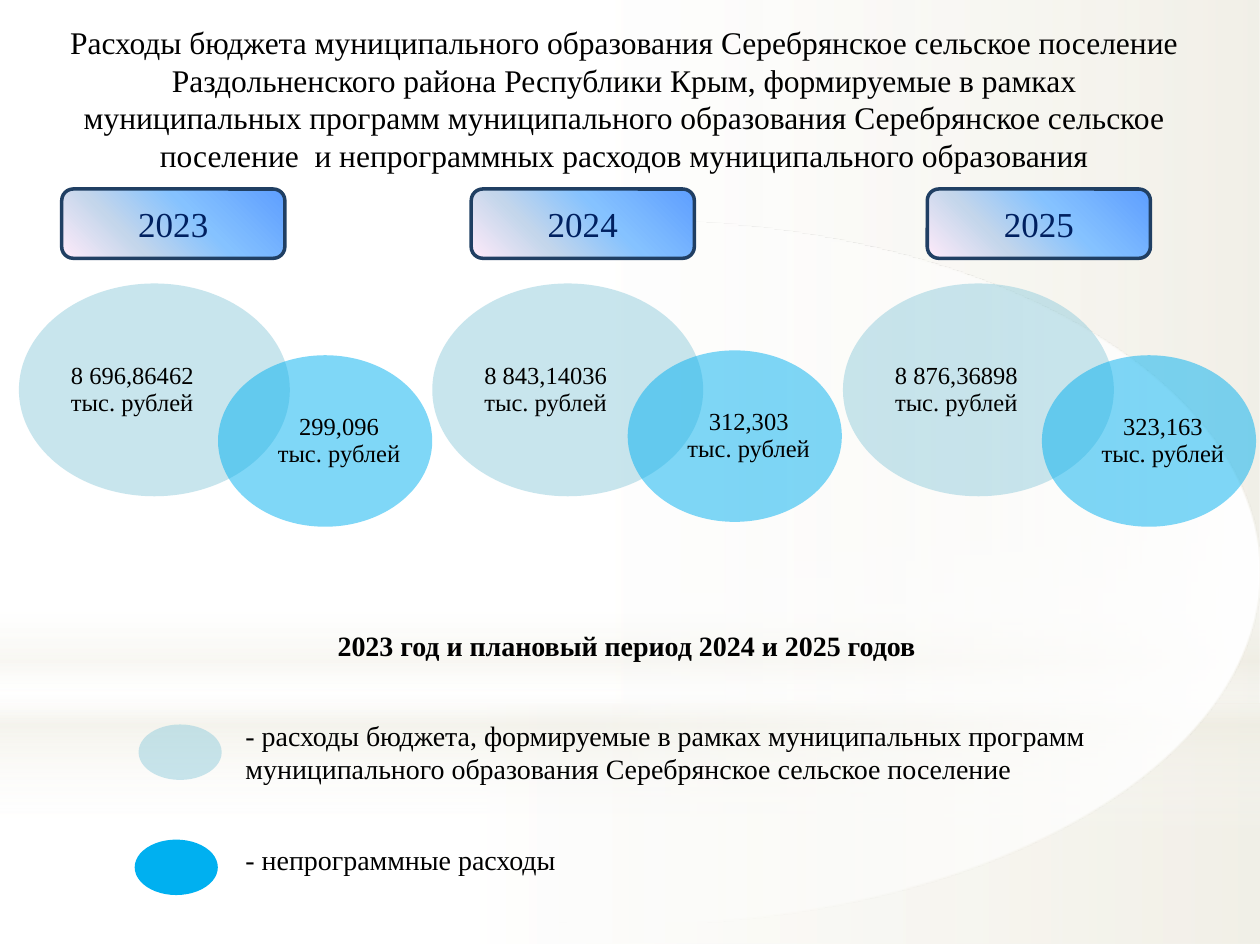
from lxml.etree import SubElement
from pptx import Presentation
from pptx.dml.color import RGBColor
from pptx.enum.shapes import MSO_SHAPE as SHAPE
from pptx.enum.text import MSO_ANCHOR as ANCHOR, MSO_AUTO_SIZE as AUTO, PP_ALIGN as ALIGN
from pptx.oxml.ns import qn
from pptx.util import Pt

FONT = "Times New Roman"
BLACK, NAVY, EDGE = "000000", "002060", "203F63"
WHITE, CREAM, TEAL, BLUE = "FFFFFF", "EEECE1", "93CDDD", "00B0F0"

TITLE = ("Расходы бюджета муниципального образования Серебрянское сельское поселение "
         "Раздольненского района Республики Крым, формируемые в рамках муниципальных "
         "программ муниципального образования Серебрянское сельское поселение  "
         "и непрограммных расходов муниципального образования")
PERIOD = "2023 год и плановый период 2024 и 2025 годов"
UNIT = "тыс. рублей"

BACKDROP = [
    (SHAPE.RECTANGLE, (0, 401.8, 720, 137.5), 0,
     [(0, WHITE, 91), (37, WHITE, 76), (100, CREAM, 79)]),
    (SHAPE.RECTANGLE, (0, 0, 720, 401.8), 0,
     [(0, WHITE, 89), (48, WHITE, 62), (100, CREAM, 79)]),
    (SHAPE.RECTANGLE, (0, 296.6, 720, 180), 90,
     [(0, WHITE, 0), (29, WHITE, 30), (45, CREAM, 40),
      (55, WHITE, 26), (65, CREAM, 60), (100, WHITE, 0)]),
    (SHAPE.OVAL, (0, 126, 720, 401.8), 180, [(0, WHITE, 100), (56, WHITE, 0)]),
]
BADGE_STOPS = [(0, "5E9EFF", 100), (40, "85C2FF", 100), (70, "C4D6EB", 100), (100, "FFEBFA", 100)]
YEARS = [
    ("2023", 35.3, ("8 696,86462", 10.8), ("299,096", 124.6, 203)),
    ("2024", 269.3, ("8 843,14036", 247), ("312,303", 358.7, 200.2)),
    ("2025", 529.9, ("8 876,36898", 481.7), ("323,163", 595.4, 203)),
]
LEGEND = [
    ("- расходы бюджета, формируемые в рамках муниципальных программ муниципального "
     "образования Серебрянское сельское поселение", (133.2, 406.8, 556, 45.4), (79.2, 414), TEAL, 50),
    ("- непрограммные расходы", (133.2, 478.1, 487.4, 26), (77, 479.8), BLUE, 100),
]


def rgb(value):
    return RGBColor.from_string(value)


def add_alpha(color, percent):
    if percent < 100:
        SubElement(color, qn("a:alpha")).set("val", str(percent * 1000))


def add_figure(s, kind, box):
    sp = s.shapes.add_shape(kind, *map(Pt, box))
    sp.shadow.inherit = False
    sp.line.fill.background()
    return sp


def fill_solid(sp, color, percent):
    sp.fill.solid()
    sp.fill.fore_color.rgb = rgb(color)
    add_alpha(sp.fill._xPr.find(qn("a:solidFill"))[0], percent)


def fill_gradient(sp, stops, angle):
    sp.fill.gradient()
    grad = sp.fill._xPr.find(qn("a:gradFill"))
    for child in list(grad):
        grad.remove(child)
    stop_list = SubElement(grad, qn("a:gsLst"))
    for position, color, percent in stops:
        stop = SubElement(stop_list, qn("a:gs"), pos=str(position * 1000))
        add_alpha(SubElement(stop, qn("a:srgbClr"), val=color), percent)
    SubElement(grad, qn("a:lin"), ang=str(angle * 60000), scaled="0")


def write(sp, text, size, color=BLACK, align=ALIGN.CENTER, anchor=ANCHOR.MIDDLE,
          insets=(7.2, 3.6, 7.2, 3.6), bold=False):
    tf = sp.text_frame
    tf.word_wrap, tf.auto_size, tf.vertical_anchor = True, AUTO.NONE, anchor
    tf.margin_left, tf.margin_top, tf.margin_right, tf.margin_bottom = map(Pt, insets)
    p = tf.paragraphs[0]
    p.alignment = align
    r = p.add_run()
    r.text = text
    r.font.name, r.font.size, r.font.bold = FONT, Pt(size), bold
    r.font.color.rgb = rgb(color)
    return p


def add_note(s, text, box, bold=False):
    write(s.shapes.add_textbox(*map(Pt, box)), text, 16, align=ALIGN.LEFT,
          anchor=ANCHOR.TOP, bold=bold)


def add_bubble(s, amount, box, color, insets):
    sp = add_figure(s, SHAPE.OVAL, box)
    fill_solid(sp, color, 50)
    p = write(sp, f"{amount} {UNIT}", 14, insets=insets)
    p.line_spacing, p.space_after = 0.9, Pt(4.9)


def add_badge(s, year, left):
    sp = add_figure(s, SHAPE.ROUNDED_RECTANGLE, (left, 108, 127.5, 39.6))
    fill_gradient(sp, BADGE_STOPS, 135)
    sp.line.color.rgb = rgb(EDGE)
    sp.line.width = Pt(2)
    write(sp, year, 20, NAVY)


def main():
    """Build the slide of programme and non-programme budget spending by year."""
    prs = Presentation()
    prs.slide_width, prs.slide_height = Pt(720), Pt(540)
    s = prs.slides.add_slide(prs.slide_layouts[5])

    for kind, box, angle, stops in BACKDROP:
        fill_gradient(add_figure(s, kind, box), stops, angle)

    title = s.shapes.title
    title.left, title.top, title.width, title.height = map(Pt, (31, 9.4, 651.6, 93.6))
    write(title, TITLE, 18, anchor=ANCHOR.TOP)
    s.shapes._spTree.append(title._element)

    for year, badge_left, (program, left), (other, other_left, other_top) in YEARS:
        add_badge(s, year, badge_left)
        add_bubble(s, program, (left, 162, 154.8, 121.6), TEAL, (1.8, 3.6, 27, 3.6))
        add_bubble(s, other, (other_left, other_top, 122.4, 98), BLUE, (16, 0, 0, 0))

    add_note(s, PERIOD, (185.8, 355.7, 383, 26), bold=True)
    for text, box, swatch, color, percent in LEGEND:
        add_note(s, text, box)
        fill_solid(add_figure(s, SHAPE.OVAL, (*swatch, 47.5, 31.7)), color, percent)

    prs.save("out.pptx")


if __name__ == "__main__":
    main()
